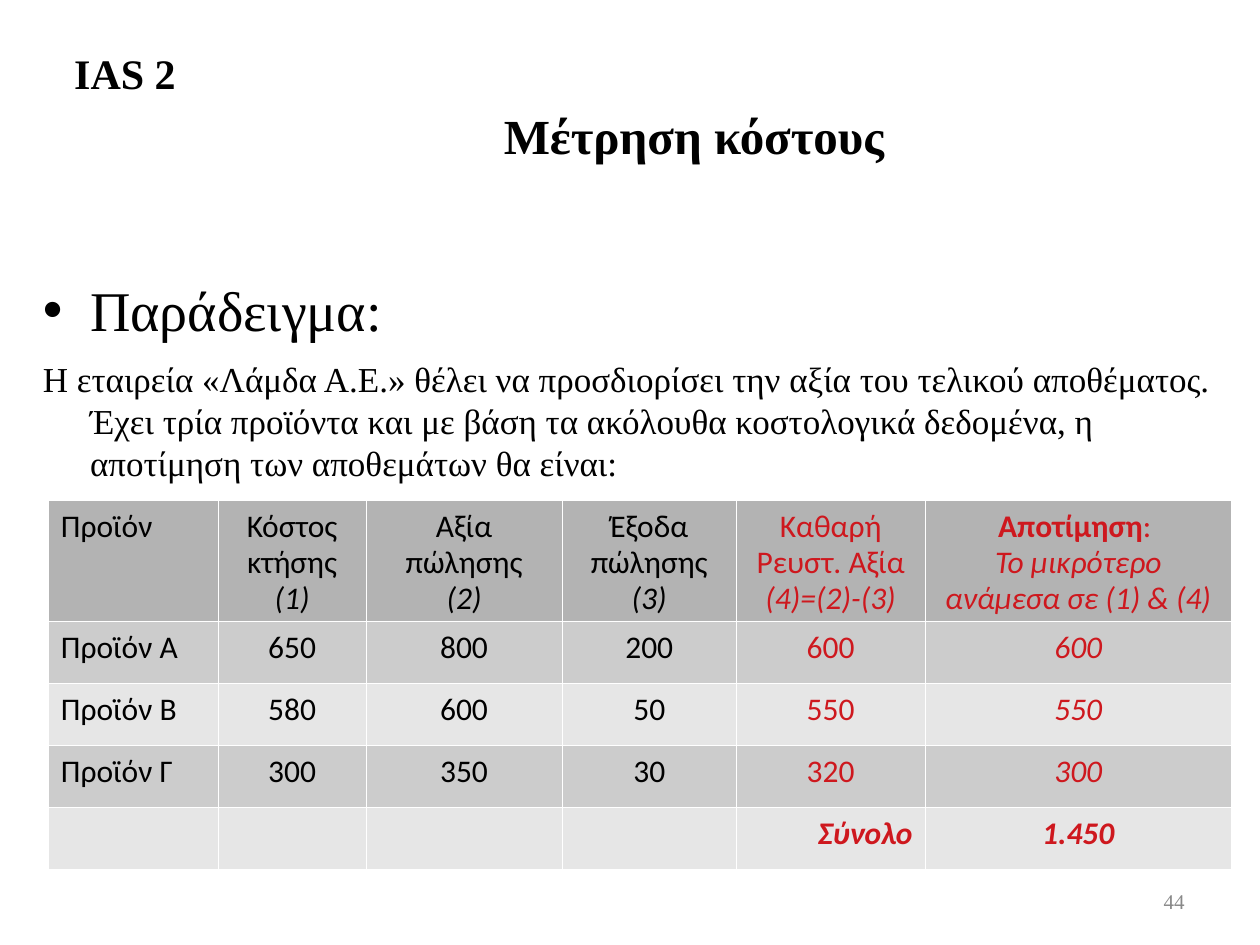
from lxml.etree import SubElement
from pptx import Presentation
from pptx.dml.color import RGBColor
from pptx.enum.text import MSO_ANCHOR as Anchor, MSO_AUTO_SIZE as AutoSize, PP_ALIGN as Align
from pptx.oxml.ns import qn
from pptx.util import Pt

COLORS = {"ink": "000000", "result": "CE181E", "page": "898989", "border": "FFFFFF",
          "header": "B3B3B3", "odd": "CCCCCC", "even": "E6E6E6"}
SERIF, SANS = "Times New Roman", "Calibri"

STANDARD = "IAS 2"
HEADING = "Μέτρηση κόστους "
PAGE = "44"
# text, size, bullet
EXAMPLE = [
    ("Παράδειγμα:", 32, "•"),
    ("Η εταιρεία «Λάμδα Α.Ε.» θέλει να προσδιορίσει την αξία του τελικού αποθέματος. "
     "Έχει τρία προϊόντα και με βάση τα ακόλουθα κοστολογικά δεδομένα, "
     "η αποτίμηση των αποθεμάτων θα είναι:", 20, None),
]

# Each cell is a list of paragraphs, each paragraph a list of (text, style) runs
HEADER = [
    [[("Προϊόν", "")]],
    [[("Κόστος κτήσης", "")], [("(1)", "i")]],
    [[("Αξία πώλησης", "")], [("(2)", "i")]],
    [[("Έξοδα πώλησης", "")], [("(3)", "i")]],
    [[("Καθαρή Ρευστ. Αξία", "")], [("(4)=(2)-(3)", "i")]],
    [[("Αποτίμηση", "b"), (": ", "")], [("Το μικρότερο ανάμεσα σε (1) & (4)", "i")]],
]
PRODUCTS = [
    ("Προϊόν Α", "650", "800", "200", "600", "600"),
    ("Προϊόν Β", "580", "600", "50", "550", "550"),
    ("Προϊόν Γ", "300", "350", "30", "320", "300"),
]
TOTAL = ("Σύνολο", "1.450")

COLUMN_WIDTHS = [97.2, 84.24, 112.32, 99.36, 108, 174.96]
HEADER_HEIGHT, ROW_HEIGHT = 69, 35.5
FIRST_RESULT = 4  # the last two columns hold the computed values


def place(shape, left, top, width, height):
    shape.left, shape.top, shape.width, shape.height = map(Pt, (left, top, width, height))


def add_run(paragraph, text, font_name, size, color, style=""):
    run = paragraph.add_run()
    run.text = text
    font = run.font
    font.name, font.size = font_name, Pt(size)
    font.bold, font.italic = "b" in style, "i" in style
    font.color.rgb = RGBColor.from_string(COLORS[color])


def set_bullet(paragraph, bullet, indent):
    props = paragraph._p.get_or_add_pPr()
    props.set("marL", str(Pt(indent)))
    props.set("indent", str(-Pt(indent)))
    if bullet:
        SubElement(props, qn("a:buChar")).set("char", bullet)
    else:
        SubElement(props, qn("a:buNone"))


def add_borders(cell):
    props = cell._tc.get_or_add_tcPr()
    for side in ("a:lnL", "a:lnR", "a:lnT", "a:lnB"):
        line = SubElement(props, qn(side), w=str(Pt(0.06)))
        SubElement(SubElement(line, qn("a:solidFill")), qn("a:srgbClr"), val=COLORS["border"])


def fill_cell(cell, paragraphs, fill, color, align):
    add_borders(cell)  # borders precede the fill in the cell properties
    cell.fill.solid()
    cell.fill.fore_color.rgb = RGBColor.from_string(COLORS[fill])
    cell.margin_left = cell.margin_right = Pt(7.2)
    cell.margin_top, cell.margin_bottom = Pt(5), Pt(3.6)
    frame = cell.text_frame
    for index, runs in enumerate(paragraphs):
        paragraph = frame.add_paragraph() if index else frame.paragraphs[0]
        paragraph.alignment, paragraph.line_spacing = align, 0.93
        for text, style in runs:
            add_run(paragraph, text, SANS, 18, color, style)


def table_rows():
    """Give every row in the paragraph-and-run form of HEADER."""
    yield HEADER
    last = len(HEADER) - 1
    for product in PRODUCTS:
        yield [[[(text, "i" if column == last else "")]] for column, text in enumerate(product)]
    yield [[]] * FIRST_RESULT + [[[(text, "bi")]] for text in TOTAL]


def add_valuation(slide):
    rows = list(table_rows())
    heights = [HEADER_HEIGHT] + [ROW_HEIGHT] * (len(rows) - 1)
    table = slide.shapes.add_table(len(rows), len(COLUMN_WIDTHS), Pt(27.6), Pt(285.8),
                                   Pt(sum(COLUMN_WIDTHS)), Pt(sum(heights))).table
    for column, width in zip(table.columns, COLUMN_WIDTHS):
        column.width = Pt(width)
    for row, height in zip(table.rows, heights):
        row.height = Pt(height)
    for r, row in enumerate(rows):
        fill = "header" if r == 0 else "odd" if r % 2 else "even"
        for c, paragraphs in enumerate(row):
            color = "result" if c >= FIRST_RESULT else "ink"
            is_total_label = r == len(rows) - 1 and c == FIRST_RESULT
            align = Align.LEFT if c == 0 else Align.RIGHT if is_total_label else Align.CENTER
            fill_cell(table.cell(r, c), paragraphs, fill, color, align)


def add_label(slide, box, text, size, color, style="", align=Align.LEFT,
              anchor=Anchor.TOP, wrap=True):
    label = slide.shapes.add_textbox(*map(Pt, box))
    frame = label.text_frame
    frame.word_wrap, frame.vertical_anchor = wrap, anchor
    frame.paragraphs[0].alignment = align
    add_run(frame.paragraphs[0], text, SERIF, size, color, style)


def main():
    prs = Presentation()
    prs.slide_width, prs.slide_height = Pt(720), Pt(540)
    slide = prs.slides.add_slide(prs.slide_layouts[1])
    title, body = slide.placeholders

    add_label(slide, (516, 500.4, 168, 28.8), PAGE, 12, "page",
              align=Align.RIGHT, anchor=Anchor.MIDDLE)

    place(body, 17.3, 154, 686, 293)
    body.text_frame.auto_size = AutoSize.NONE
    for index, (text, size, bullet) in enumerate(EXAMPLE):
        frame = body.text_frame
        paragraph = frame.add_paragraph() if index else frame.paragraphs[0]
        paragraph.space_before = Pt(8 if index else 0)
        set_bullet(paragraph, bullet, 27)
        add_run(paragraph, text, SERIF, size, "ink")

    add_label(slide, (35.3, 23.8, 78.5, 35.3), STANDARD, 24, "ink", "b", wrap=False)

    place(title, 80, 23, 640, 108.7)
    title.text_frame.auto_size = AutoSize.NONE
    title.text_frame.vertical_anchor = Anchor.MIDDLE
    heading = title.text_frame.paragraphs[0]
    heading.alignment = Align.CENTER
    add_run(heading, HEADING, SERIF, 28, "ink", "b")

    add_valuation(slide)
    prs.save("out.pptx")


if __name__ == "__main__":
    main()
